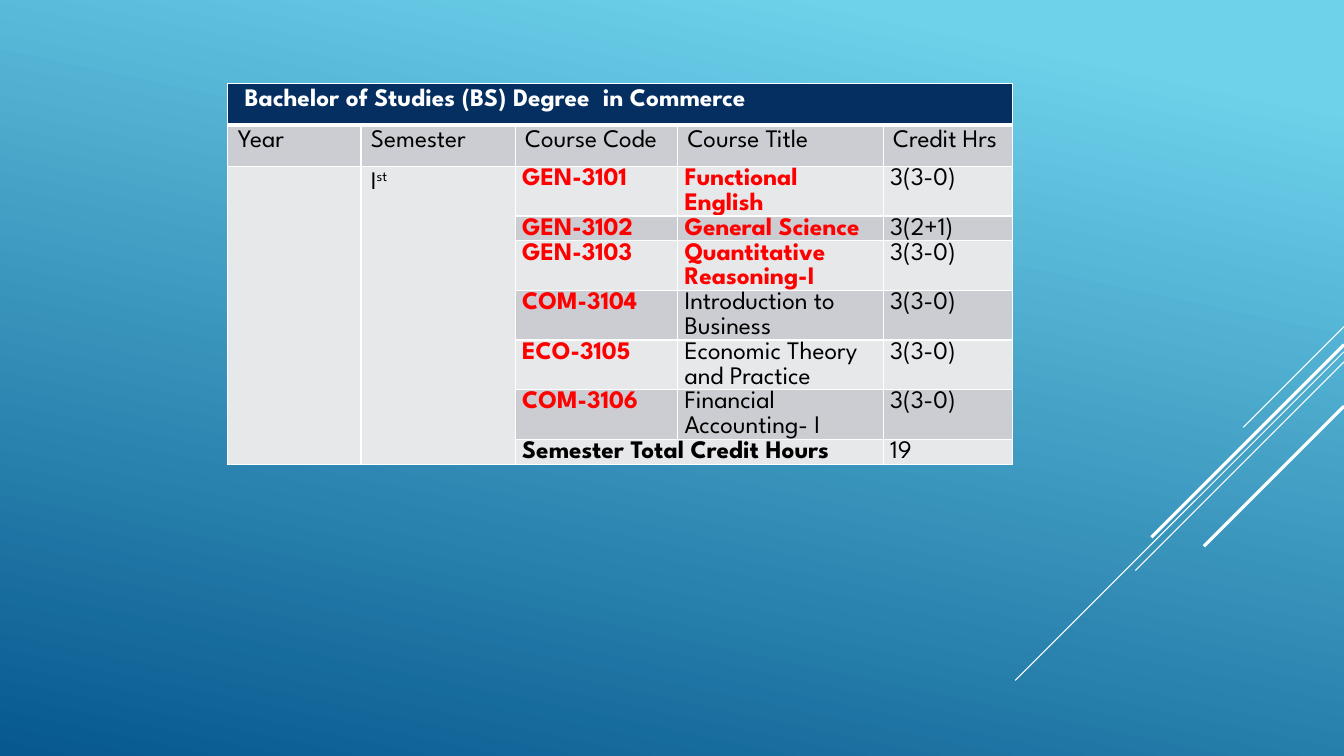
"""Build the slide with the first-semester course table for the BS Commerce degree."""
import pptx
import pptx.util
import pptx.dml.color
import pptx.enum.shapes
import pptx.oxml.ns
from lxml import etree
from pptx.util import Inches, Pt

RGBColor = pptx.dml.color.RGBColor
WHITE = RGBColor(0xFF, 0xFF, 0xFF)
BLACK = RGBColor(0, 0, 0)
RED = RGBColor(0xFF, 0, 0)
NAVY = RGBColor(0x05, 0x2F, 0x61)
DARK_BAND = RGBColor(0xCC, 0xCD, 0xD2)
LIGHT_BAND = RGBColor(0xE7, 0xE8, 0xEA)
SKY = RGBColor(0x6E, 0xD2, 0xEB)
OCEAN = RGBColor(0x06, 0x58, 0x8E)
FONT = "League Spartan"

DEGREE = " Bachelor of Studies (BS) Degree  in Commerce"
HEADINGS = ["Year", "Semester", "Course Code", "Course Title", "Credit Hrs"]
COURSES = [
    ("GEN-3101", "Functional English", "3(3-0)"),
    ("GEN-3102", "General Science", "3(2+1)"),
    ("GEN-3103", "Quantitative Reasoning-I", "3(3-0)"),
    ("COM-3104", "Introduction to Business", "3(3-0)"),
    ("ECO-3105", "Economic Theory and Practice", "3(3-0)"),
    ("COM-3106", "Financial Accounting- I", "3(3-0)"),
]
TOTAL = ("Semester Total Credit Hours", "19")

COLUMN_WIDTHS = [1.32, 1.53, 1.61, 2.04, 1.28]
HEADING_HEIGHT, LINE_HEIGHT = 0.41, 0.245
COURSE_LINES = [2, 1, 2, 2, 2, 2, 1]
ROW_HEIGHTS = [HEADING_HEIGHT] * 2 + [LINE_HEIGHT * lines for lines in COURSE_LINES]

RIGHT_EDGE = 13.33
STREAKS = [(3.24, 1, 0.75), (3.49, 3.26, 0.75), (3.59, 2.07, 0.75),
           (3.42, 1.91, 2.25), (4.03, 1.39, 2.25)]


def paint_background(page):
    fill = page.background.fill
    fill.gradient()
    fill.gradient_angle = 258
    for stop, color, position in zip(fill.gradient_stops, (SKY, OCEAN), (0.1, 1)):
        stop.color.rgb = color
        stop.position = position


def add_streak(page, top, reach, weight):
    line = page.shapes.add_connector(
        pptx.enum.shapes.MSO_CONNECTOR.STRAIGHT, Inches(RIGHT_EDGE), Inches(top),
        Inches(RIGHT_EDGE - reach), Inches(top + reach))
    line.line.color.rgb = WHITE
    line.line.width = Pt(weight)
    etree.SubElement(line._element.spPr, pptx.oxml.ns.qn("a:effectLst"))


def style_cell(cell, fill, top=1, bottom=1):
    cell.fill.solid()
    cell.fill.fore_color.rgb = fill
    properties = cell._tc.get_or_add_tcPr()
    sides = [("L", 1), ("R", 1), ("T", top), ("B", bottom)]
    for index, (side, weight) in enumerate(sides):
        border = etree.Element(pptx.oxml.ns.qn(f"a:ln{side}"), w=str(Pt(weight)))
        solid = etree.SubElement(border, pptx.oxml.ns.qn("a:solidFill"))
        etree.SubElement(solid, pptx.oxml.ns.qn("a:srgbClr"), val=str(WHITE))
        properties.insert(index, border)


def write(cell, text, color=BLACK, bold=False, compact=False):
    para = cell.text_frame.paragraphs[0]
    para.add_run().text = text
    if compact:
        cell.margin_left = cell.margin_right = Inches(0.07)
        cell.margin_top = cell.margin_bottom = 0
        para.line_spacing = 1.07
    para.font.name = FONT
    para.font.size = Pt(18)
    para.font.bold = bold
    para.font.color.rgb = color
    return para


def add_course_table(page):
    table = page.shapes.add_table(
        len(ROW_HEIGHTS), len(COLUMN_WIDTHS), Inches(2.26), Inches(0.83),
        Inches(sum(COLUMN_WIDTHS)), Inches(sum(ROW_HEIGHTS))).table
    table.first_row = table.horz_banding = False
    for column, width in zip(table.columns, COLUMN_WIDTHS):
        column.width = Inches(width)
    for number, (row, height) in enumerate(zip(table.rows, ROW_HEIGHTS)):
        row.height = Inches(height)
        for place, cell in enumerate(row.cells):
            if number == 0:
                style_cell(cell, NAVY, bottom=3)
            else:
                banded = number % 2 and (place > 1 or number == 1)
                style_cell(cell, DARK_BAND if banded else LIGHT_BAND,
                           top=3 if number == 1 else 1)

    last = len(ROW_HEIGHTS) - 1
    for start, end in [((0, 0), (0, 4)), ((2, 0), (last, 0)),
                       ((2, 1), (last, 1)), ((last, 2), (last, 3))]:
        table.cell(*start).merge(table.cell(*end))

    write(table.cell(0, 0), DEGREE, WHITE, bold=True)
    for place, heading in enumerate(HEADINGS):
        write(table.cell(1, place), heading)
    ordinal = write(table.cell(2, 1), "I").add_run()
    ordinal.text = "st"
    ordinal._r.get_or_add_rPr().set("baseline", "30000")

    for number, (code, title, hours) in enumerate(COURSES, start=2):
        general = code.startswith("GEN")
        write(table.cell(number, 2), code, RED, bold=True, compact=True)
        write(table.cell(number, 3), title, RED if general else BLACK,
              bold=general, compact=True)
        write(table.cell(number, 4), hours, compact=True)
    label, hours = TOTAL
    write(table.cell(last, 2), label, bold=True, compact=True)
    write(table.cell(last, 4), hours, compact=True)


def main():
    deck = pptx.Presentation()
    deck.slide_width, deck.slide_height = Inches(13.33), Inches(7.5)
    page = deck.slides.add_slide(deck.slide_layouts.get_by_name("Blank"))
    paint_background(page)
    for top, reach, weight in STREAKS:
        add_streak(page, top, reach, weight)
    add_course_table(page)
    deck.save("out.pptx")


if __name__ == "__main__":
    main()
